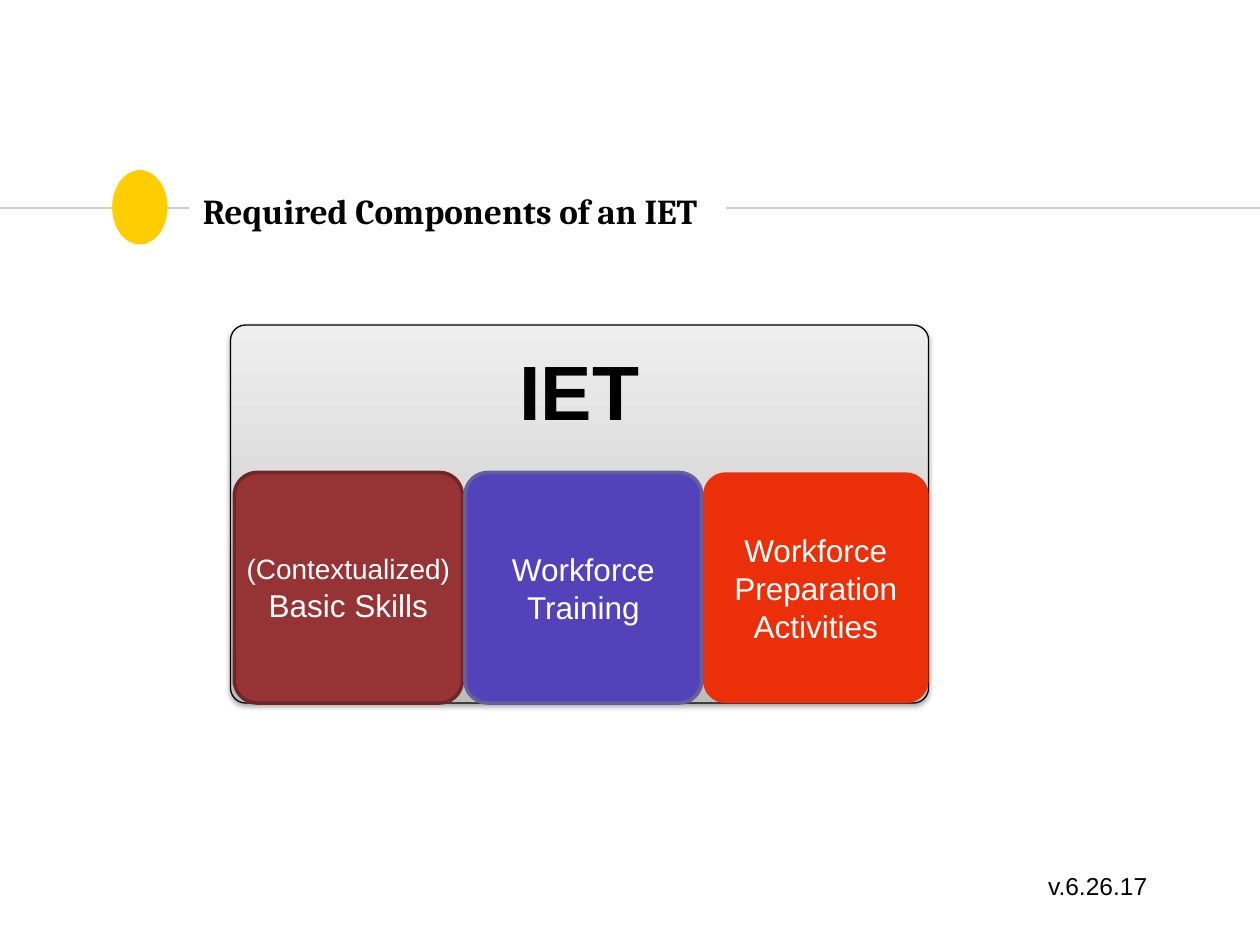
from lxml import etree
from pptx import Presentation
from pptx.dml.color import RGBColor
from pptx.enum.shapes import MSO_CONNECTOR, MSO_SHAPE
from pptx.enum.text import MSO_ANCHOR, PP_ALIGN
from pptx.oxml.ns import qn
from pptx.util import Inches, Pt

ELLIPSE = MSO_SHAPE.OVAL
ROUNDED = MSO_SHAPE.ROUNDED_RECTANGLE
STRAIGHT = MSO_CONNECTOR.STRAIGHT
TOP, MIDDLE = MSO_ANCHOR.TOP, MSO_ANCHOR.MIDDLE
LEFT, CENTER = PP_ALIGN.LEFT, PP_ALIGN.CENTER

WIDTH, HEIGHT = Inches(10), Inches(7.5)
COLORS = {
    "black": "000000", "white": "FFFFFF", "rule": "CCCCCC", "yellow": "FFCD00",
    "gray_low": "BDBDBD", "gray_mid": "D1D1D1", "gray_high": "EEEEEE",
    "maroon": "963334", "maroon_edge": "6F2626",
    "violet": "5243BB", "violet_edge": "675F9B", "red": "EB2F09",
}
RULE_Y = 22
BOX_TOP, BOX_HEIGHT = 50, 24.4
COMPONENTS = [
    (18.6, 18.1, "maroon", "maroon_edge", [("(Contextualized) ", 16), ("Basic Skills", 18)], 0),
    (36.9, 18.8, "violet", "violet_edge", [("Workforce Training", 18)], 0.1),
    (55.8, 17.9, "red", None, [("Workforce Preparation Activities", 18)], 0.1),
]


def color(name):
    return RGBColor.from_string(COLORS[name])


def across(percent):
    return round(WIDTH * percent / 100)


def down(percent):
    return round(HEIGHT * percent / 100)


def area(left, top, width, height):
    return across(left), down(top), across(width), down(height)


def set_values(target, values):
    for name, value in values.items():
        setattr(target, name, value)


def write_text(shape, runs, ink, align=CENTER, font="Arial", bold=False, **frame_values):
    frame = shape.text_frame
    set_values(frame, {"word_wrap": True, **frame_values})
    paragraph = frame.paragraphs[0]
    paragraph.alignment = align
    for text, size in runs:
        run = paragraph.add_run()
        run.text = text
        set_values(run.font, {"name": font, "size": Pt(size), "bold": bold})
        run.font.color.rgb = color(ink)


def add_rule(slide, start, end):
    rule = slide.shapes.add_connector(
        STRAIGHT, across(start), down(RULE_Y), across(end), down(RULE_Y))
    rule.line.color.rgb = color("rule")
    rule.line.width = Pt(0.75)
    etree.SubElement(rule._element.spPr, qn("a:effectLst"))


def add_shape(shapes, kind, box, fill=None, edge=None, edge_width=2, radius=None):
    shape = shapes.add_shape(kind, *area(*box))
    shape.shadow.inherit = False
    if radius is not None:
        shape.adjustments[0] = radius
    if fill:
        shape.fill.solid()
        shape.fill.fore_color.rgb = color(fill)
    if edge:
        shape.line.color.rgb = color(edge)
        shape.line.width = Pt(edge_width)
    else:
        shape.line.fill.background()
    return shape


def add_color(parent, name):
    return etree.SubElement(parent, qn("a:srgbClr"), val=COLORS[name])


def apply_gradient(shape, stops):
    shape.fill.gradient()
    shape.fill.gradient_angle = 90
    stop_list = shape._element.spPr.find(qn("a:gradFill")).find(qn("a:gsLst"))
    for stop in list(stop_list):
        stop_list.remove(stop)
    for percent, name in stops:
        add_color(etree.SubElement(stop_list, qn("a:gs"), pos=str(percent * 1000)), name)


def apply_shadow(shape):
    effects = shape._element.spPr.find(qn("a:effectLst"))
    shadow = etree.SubElement(
        effects, qn("a:outerShdw"), blurRad=str(Pt(3.1)), dist=str(Pt(1.6)),
        dir="5400000", rotWithShape="0")
    etree.SubElement(add_color(shadow, "black"), qn("a:alpha"), val="38000")


def add_title(slide):
    title = slide.shapes.title
    set_values(title, dict(zip(("left", "top", "width", "height"), area(15.1, 18, 42.4, 8.53))))
    margins = dict.fromkeys(
        ("margin_left", "margin_top", "margin_right", "margin_bottom"), Inches(0.1))
    write_text(title, [("Required Components of an IET", 20)], "black", LEFT,
               "Cambria", True, vertical_anchor=MIDDLE, **margins)


def add_diagram(slide):
    shapes = slide.shapes.add_group_shape().shapes
    panel = add_shape(shapes, ROUNDED, (18.3, 34.4, 55.4, 40),
                      edge="black", edge_width=0.75, radius=0.04)
    apply_gradient(panel, [(0, "gray_low"), (35, "gray_mid"), (100, "gray_high")])
    apply_shadow(panel)
    write_text(panel, [("IET", 44)], "black", bold=True,
               vertical_anchor=TOP, margin_top=Inches(0.11))
    for left, width, fill, edge, runs, margin in COMPONENTS:
        box = add_shape(shapes, ROUNDED, (left, BOX_TOP, width, BOX_HEIGHT),
                        fill, edge, radius=0.1)
        write_text(box, runs, "white", vertical_anchor=MIDDLE,
                   margin_left=Inches(margin), margin_right=Inches(margin))


def add_version(slide):
    box = slide.shapes.add_textbox(*area(82.2, 91.47, 10.1, 4.53))
    write_text(box, [("v.6.26.17", 14)], "black", LEFT, word_wrap=False)


def main():
    presentation = Presentation()
    set_values(presentation, {"slide_width": WIDTH, "slide_height": HEIGHT})
    slide = presentation.slides.add_slide(presentation.slide_layouts[5])
    add_rule(slide, 0, 15)
    add_shape(slide.shapes, ELLIPSE, (8.9, 18, 4.4, 7.87), "yellow")
    add_rule(slide, 57.6, 100)
    add_title(slide)
    add_diagram(slide)
    add_version(slide)
    presentation.save("out.pptx")


if __name__ == "__main__":
    main()
